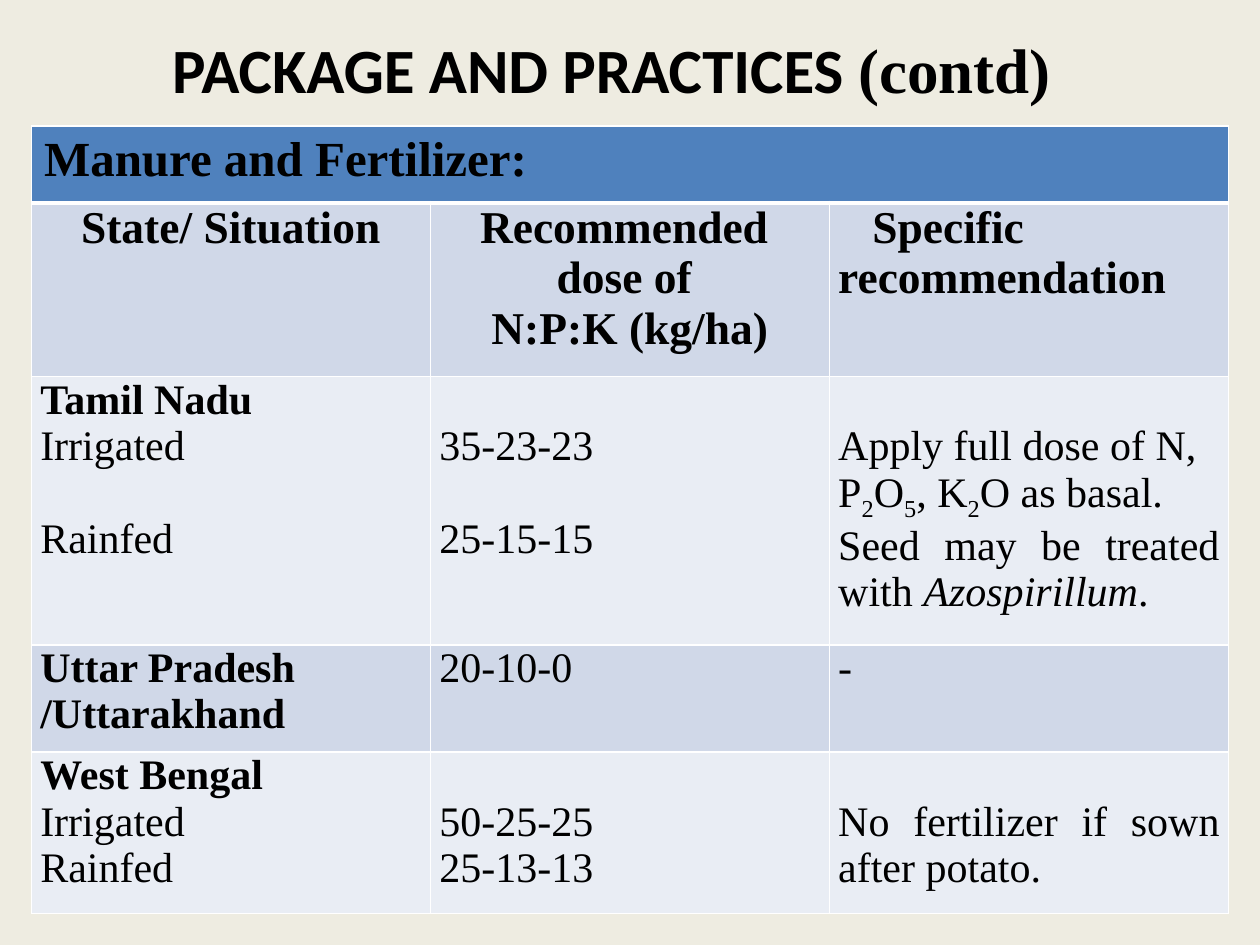
from dataclasses import dataclass

from lxml.etree import SubElement
from pptx import Presentation
from pptx.dml.color import RGBColor
from pptx.enum.text import MSO_ANCHOR, PP_ALIGN as Align
from pptx.oxml.ns import qn
from pptx.util import Inches, Pt

COLORS = {
    "background": "EEECE1",
    "header": "4F81BD",
    "band_dark": "D0D8E8",
    "band_light": "E9EDF4",
    "border": "FFFFFF",
    "text": "000000",
}
SERIF, SANS = "Times New Roman", "Calibri"
SLIDE_WIDTH, SLIDE_HEIGHT = Inches(10), Inches(7.5)
COLUMNS = 3
ROW_HEIGHTS = (0.61, 1.38, 2.13, 0.85, 1.28)
BODY_LINE = 0.37  # inches taken by one 24 pt line


@dataclass(frozen=True)
class Span:
    text: str
    bold: bool = False
    italic: bool = False
    subscript: bool = False
    font: str = SERIF


@dataclass(frozen=True)
class Line:
    spans: tuple[Span, ...]
    align: Align = Align.LEFT
    lines_before: int = 0
    indent: float = 0


@dataclass(frozen=True)
class Entry:
    lines: tuple[Line, ...]
    size: int = 24
    lines_above: int = 0


def plain(text: str, **layout) -> Line:
    return Line((Span(text),), **layout)


def bold(text: str, **layout) -> Line:
    return Line((Span(text, bold=True),), **layout)


def sub(text: str) -> Span:
    return Span(text, subscript=True)


TITLE = Line((Span("PACKAGE AND PRACTICES ", bold=True, font=SANS),
              Span("(contd) ", bold=True)), Align.CENTER)

ROWS = (
    (Entry((bold("Manure and Fertilizer:"),), 28),),
    (
        Entry((bold("State/ Situation", align=Align.CENTER),), 26),
        Entry(tuple(bold(text, align=Align.CENTER) for text in
                    ("Recommended ", "dose of ", "N:P:K (kg/ha)")), 26),
        Entry((bold("Specific recommendation", indent=0.27),), 26),
    ),
    (
        Entry((bold("Tamil Nadu"), plain("Irrigated"), plain("Rainfed", lines_before=1))),
        Entry((plain("35-23-23"), plain("25-15-15", lines_before=1)), lines_above=1),
        Entry((
            Line((Span("Apply full dose of N, P"), sub("2"), Span("O"), sub("5"),
                  Span(", K"), sub("2"), Span("O as basal."))),
            Line((Span("Seed may be treated with "), Span("Azospirillum", italic=True),
                  Span(".")), Align.JUSTIFY),
        ), lines_above=1),
    ),
    (
        Entry((bold("Uttar Pradesh"), bold("/Uttarakhand"))),
        Entry((plain("20-10-0"),)),
        Entry((plain("-"),)),
    ),
    (
        Entry((bold("West Bengal"), plain("Irrigated"), plain("Rainfed"))),
        Entry((plain("50-25-25"), plain("25-13-13")), lines_above=1),
        Entry((plain("No fertilizer if sown after potato.", align=Align.JUSTIFY),),
              lines_above=1),
    ),
)


def rgb(name: str) -> RGBColor:
    return RGBColor.from_string(COLORS[name])


def write_lines(frame, lines: tuple[Line, ...], size: int) -> None:
    for number, line in enumerate(lines):
        para = frame.add_paragraph() if number else frame.paragraphs[0]
        para.alignment = line.align
        if line.lines_before:
            para.space_before = Inches(line.lines_before * BODY_LINE)
        if line.indent:
            properties = para._p.get_or_add_pPr()
            properties.set("marL", "0")
            properties.set("indent", str(Inches(line.indent)))
        for span in line.spans:
            run = para.add_run()
            run.text = span.text
            formats = {"name": span.font, "size": Pt(size),
                       "bold": span.bold, "italic": span.italic}
            for key, value in formats.items():
                setattr(run.font, key, value)
            run.font.color.rgb = rgb("text")
            if span.subscript:
                run._r.get_or_add_rPr().set("baseline", "-25000")


def draw_borders(cell, row: int) -> None:
    """Rule all four sides, with a heavier line below the header row."""
    widths = {"lnL": 1, "lnR": 1, "lnT": 3 if row == 1 else 1, "lnB": 3 if row == 0 else 1}
    properties = cell._tc.get_or_add_tcPr()
    for position, (side, width) in enumerate(widths.items()):
        border = SubElement(properties, qn(f"a:{side}"), w=str(Pt(width)))
        fill = SubElement(border, qn("a:solidFill"))
        SubElement(fill, qn("a:srgbClr"), val=COLORS["border"])
        properties.insert(position, border)


def fill_cell(cell, entry: Entry, row: int) -> None:
    if row:
        margins = {"margin_left": 0.07, "margin_right": 0.07,
                   "margin_top": entry.lines_above * BODY_LINE, "margin_bottom": 0}
        for key, value in margins.items():
            setattr(cell, key, Inches(value))
    write_lines(cell.text_frame, entry.lines, entry.size)


def add_title(slide) -> None:
    title = slide.shapes.title
    place = {"left": 0.33, "top": 0, "width": 9.17, "height": 1.08}
    for key, value in place.items():
        setattr(title, key, Inches(value))
    title.text_frame.vertical_anchor = MSO_ANCHOR.MIDDLE
    write_lines(title.text_frame, (TITLE,), 36)


def add_fertilizer_table(slide) -> None:
    margin = int(SLIDE_WIDTH * 0.025)
    width = SLIDE_WIDTH - 2 * margin
    table = slide.shapes.add_table(len(ROWS), COLUMNS, margin, Inches(1), width,
                                   Inches(sum(ROW_HEIGHTS))).table
    for column in table.columns:
        column.width = width // COLUMNS
    table.cell(0, 0).merge(table.cell(0, COLUMNS - 1))
    for row, (entries, height) in enumerate(zip(ROWS, ROW_HEIGHTS)):
        table.rows[row].height = Inches(height)
        fill = "header" if row == 0 else "band_dark" if row % 2 else "band_light"
        for cell in table.rows[row].cells:
            cell.fill.solid()
            cell.fill.fore_color.rgb = rgb(fill)
            draw_borders(cell, row)
        for column, entry in enumerate(entries):
            fill_cell(table.cell(row, column), entry, row)


def main() -> None:
    deck = Presentation()
    deck.slide_width, deck.slide_height = SLIDE_WIDTH, SLIDE_HEIGHT
    slide = deck.slides.add_slide(deck.slide_layouts[5])
    slide.background.fill.solid()
    slide.background.fill.fore_color.rgb = rgb("background")
    add_title(slide)
    add_fertilizer_table(slide)
    deck.save("out.pptx")


if __name__ == "__main__":
    main()
